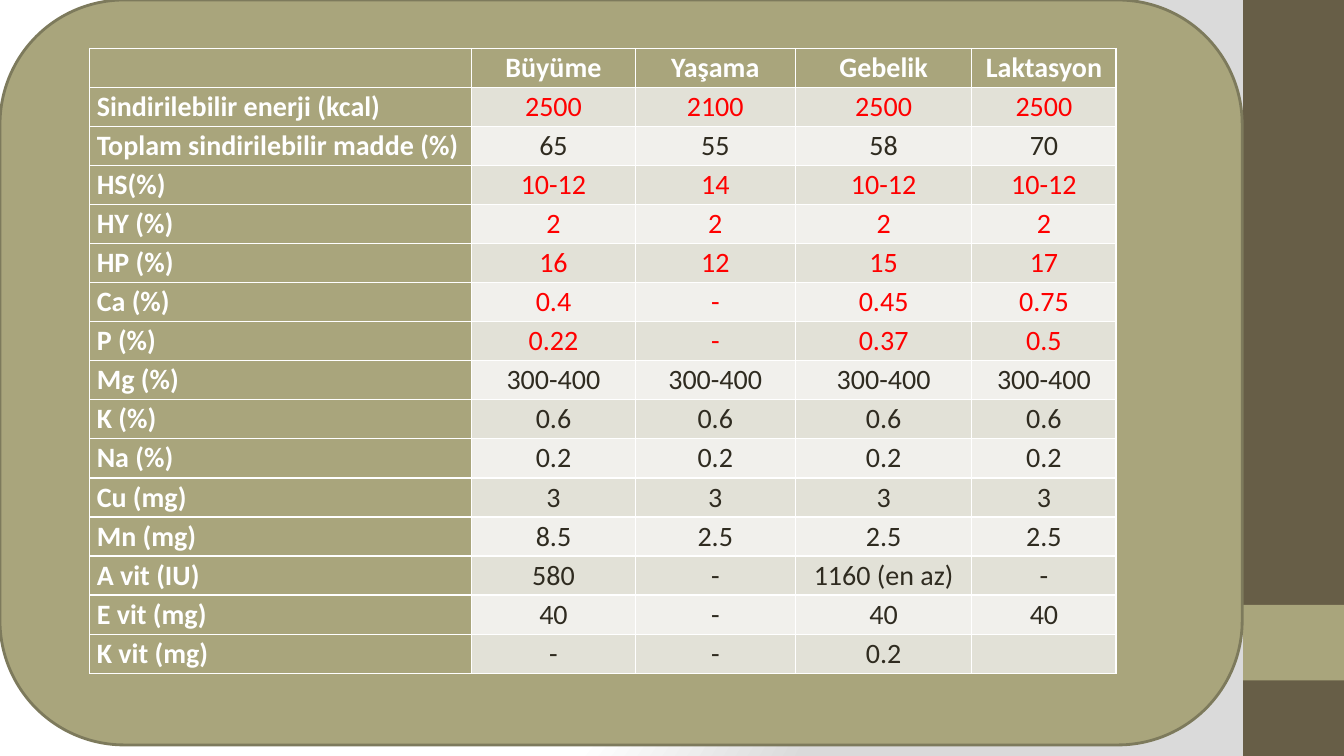
from dataclasses import dataclass

from pptx import Presentation
from pptx.dml.color import RGBColor
from pptx.enum.shapes import MSO_SHAPE
from pptx.enum.text import PP_ALIGN
from pptx.oxml import parse_xml
from pptx.oxml.ns import nsdecls
from pptx.util import Inches, Pt


@dataclass(frozen=True)
class Theme:
    brown: str = "675E47"
    olive: str = "A9A57C"
    edge: str = "7D7A5C"
    bands: tuple = ("F1F0EC", "E2E1D7")
    white: str = "FFFFFF"
    gray: str = "DADADA"
    ink: str = "2F2B20"
    red: str = "FF0000"
    font: str = "Calibri"
    size: int = 20


THEME = Theme()
WIDTHS = (3.79, 1.62, 1.59, 1.75, 1.43)
MARGINS = {"margin_left": 0.07, "margin_right": 0.07,
           "margin_top": 0, "margin_bottom": 0}
RED_ROWS = {1, 3, 4, 5, 6, 7}
NEEDS = (
    ("", "Büyüme", "Yaşama", "Gebelik", "Laktasyon"),
    ("Sindirilebilir enerji (kcal)", "2500", "2100", "2500", "2500"),
    ("Toplam sindirilebilir madde (%)", "65", "55", "58", "70"),
    ("HS(%)", "10-12", "14", "10-12", "10-12"),
    ("HY (%)", "2", "2", "2", "2"),
    ("HP (%)", "16", "12", "15", "17"),
    ("Ca (%)", "0.4", "-", "0.45", "0.75"),
    ("P (%)", "0.22", "-", "0.37", "0.5"),
    ("Mg (%)", "300-400", "300-400", "300-400", "300-400"),
    ("K (%)", "0.6", "0.6", "0.6", "0.6"),
    ("Na (%)", "0.2", "0.2", "0.2", "0.2"),
    ("Cu (mg)", "3", "3", "3", "3"),
    ("Mn (mg)", "8.5", "2.5", "2.5", "2.5"),
    ("A vit (IU)", "580", "-", "1160 (en az)", "-"),
    ("E vit (mg)", "40", "-", "40", "40"),
    ("K vit (mg)", "-", "-", "0.2", ""),
)


def rgb(code):
    return RGBColor.from_string(code)


def paint(slide):
    """Give the slide a radial background gradient."""
    stops = "".join(
        f'<a:gs pos="{pos * 1000}"><a:srgbClr val="{code}"/></a:gs>'
        for pos, code in ((0, THEME.white), (75, THEME.white), (100, THEME.gray)))
    slide.background.fill.solid()
    props = slide.background.fill._xPr
    props.replace(props[0], parse_xml(
        f'<a:gradFill {nsdecls("a")} rotWithShape="1"><a:gsLst>{stops}</a:gsLst>'
        '<a:path path="circle"><a:fillToRect l="20000" t="50000" r="100000" '
        'b="50000"/></a:path></a:gradFill>'))


def block(slide, kind, box, fill, edge=None):
    shape = slide.shapes.add_shape(kind, *map(Inches, box))
    shape.shadow.inherit = False
    shape.fill.solid()
    shape.fill.fore_color.rgb = rgb(fill)
    if edge:
        shape.line.color.rgb = rgb(edge)
        shape.line.width = Pt(2)
    else:
        shape.line.fill.background()


def side(slide, box):
    left, top, width, height = box
    block(slide, MSO_SHAPE.RECTANGLE, box, THEME.brown)
    block(slide, MSO_SHAPE.RECTANGLE,
          (left, top + 0.8 * height, width, height / 10), THEME.olive)


def style(cell, row, col):
    """Set one cell's margins, fill and text format."""
    for name, size in MARGINS.items():
        setattr(cell, name, Inches(size))
    head = row == 0 or col == 0
    cell.fill.solid()
    cell.fill.fore_color.rgb = rgb(THEME.olive if head else THEME.bands[row % 2])
    para = cell.text_frame.paragraphs[0]
    para.alignment = PP_ALIGN.CENTER if col else PP_ALIGN.LEFT
    para.line_spacing = 1.07
    look = {"name": THEME.font, "size": Pt(THEME.size), "bold": head}
    for run in para.runs:
        for name, value in look.items():
            setattr(run.font, name, value)
        body = THEME.red if row in RED_ROWS else THEME.ink
        run.font.color.rgb = rgb(THEME.white if head else body)


def chart(slide, box):
    """Place the table of needs in the box."""
    table = slide.shapes.add_table(
        len(NEEDS), len(WIDTHS), *map(Inches, box)).table
    table.first_col = True
    for column, width in zip(table.columns, WIDTHS):
        column.width = Inches(width)
    for row, texts in enumerate(NEEDS):
        for col, text in enumerate(texts):
            cell = table.cell(row, col)
            if text:
                cell.text = text
            style(cell, row, col)


def main():
    deck = Presentation()
    deck.slide_width, deck.slide_height = Inches(13.33), Inches(7.5)
    slide = deck.slides.add_slide(deck.slide_layouts[6])
    paint(slide)
    side(slide, (12.33, 0, 1, 7.5))
    block(slide, MSO_SHAPE.ROUNDED_RECTANGLE, (0, 0, 12.32, 7.39),
          THEME.olive, THEME.edge)
    chart(slide, (0.89, 0.48, sum(WIDTHS), 6.2))
    deck.save("out.pptx")


if __name__ == "__main__":
    main()
